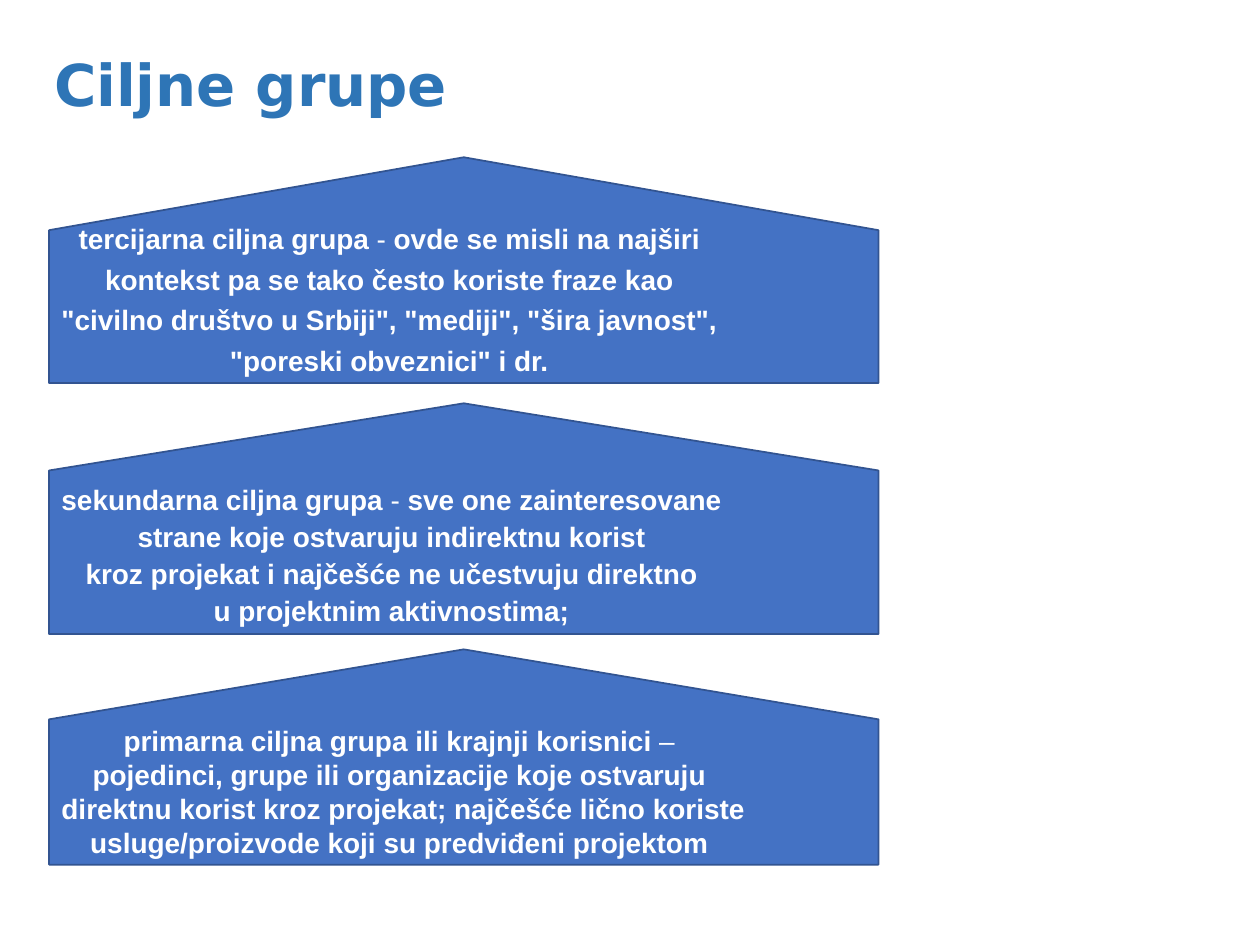
import pptx
import pptx.util
import pptx.dml.color
import pptx.enum.shapes
import pptx.enum.text

Cm, Pt = pptx.util.Cm, pptx.util.Pt
ANCHOR = pptx.enum.text.MSO_ANCHOR

LEFT, WIDTH = 0.99, 16.72
TOP, STEP = 3.17, 4.96

# height (cm), point depth, line spacing, bottom inset (cm), lines of (text, bold) runs
GROUPS = [
    (4.55, 0.323, 1.0, 0.25, [
        [("tercijarna ciljna grupa", True), (" - ", False),
         ("ovde se misli na najširi ", True)],
        [("kontekst pa se tako često koriste fraze kao ", True)],
        [('"civilno društvo u Srbiji", "mediji", "šira javnost", ', True)],
        [('"poreski obveznici" i dr. ', True)],
    ]),
    (4.65, 0.291, 0.9, 0.13, [
        [("sekundarna ciljna grupa ", True), ("- ", False),
         ("sve one zainteresovane ", True)],
        [("strane koje ostvaruju indirektnu korist ", True)],
        [("kroz projekat i najčešće ne učestvuju direktno ", True)],
        [("u projektnim aktivnostima; ", True)],
    ]),
    (4.34, 0.325, 0.8, 0.13, [
        [("primarna ciljna grupa ili krajnji korisnici ", True), ("– ", False)],
        [("pojedinci, grupe ili organizacije koje ostvaruju ", True)],
        [("direktnu korist kroz projekat; najčešće lično koriste", True)],
        [("usluge/proizvode koji su predviđeni projektom ", True)],
    ]),
]


def color(code):
    return pptx.dml.color.RGBColor.from_string(code)


def add_run(para, text, size, font, code, bold):
    run = para.add_run()
    run.text = text
    run.font.size = Pt(size)
    run.font.name = font
    run.font.bold = bold
    run.font.color.rgb = color(code)


def add_title(slide, text):
    box = slide.shapes.add_textbox(Cm(0.84), Cm(0.64), Cm(22.86), Cm(2.24))
    frame = box.text_frame
    frame.word_wrap = True
    frame.vertical_anchor = ANCHOR.MIDDLE
    para = frame.paragraphs[0]
    para.line_spacing = 0.9
    add_run(para, text, 33, "DejaVu Sans", "2E75B6", True)


def add_group(slide, top, height, depth, spacing, inset, lines):
    """Add a pentagon turned to point up, with its text kept level."""
    shift = (WIDTH - height) / 2
    shape = slide.shapes.add_shape(
        pptx.enum.shapes.MSO_SHAPE.PENTAGON,
        Cm(LEFT + shift), Cm(top - shift), Cm(height), Cm(WIDTH))
    shape.rotation = 270
    shape.adjustments[0] = depth
    shape.shadow.inherit = False
    shape.fill.solid()
    shape.fill.fore_color.rgb = color("4472C4")
    shape.line.color.rgb = color("325491")
    shape.line.width = Pt(1)

    frame = shape.text_frame
    frame.word_wrap = False
    frame.vertical_anchor = ANCHOR.BOTTOM
    frame.margin_bottom = Cm(inset)
    shape.element.txBody.bodyPr.set("vert", "eaVert")
    for i, line in enumerate(lines):
        para = frame.add_paragraph() if i else frame.paragraphs[0]
        para.alignment = pptx.enum.text.PP_ALIGN.CENTER
        para.line_spacing = spacing
        para.space_before = Pt(3.9)
        for text, bold in line:
            add_run(para, text, 16, "Arial", "FFFFFF", bold)


def main():
    deck = pptx.Presentation()
    deck.slide_width, deck.slide_height = Cm(25.4), Cm(19.05)
    slide = deck.slides.add_slide(deck.slide_layouts[6])
    add_title(slide, "Ciljne grupe")
    for i, group in reversed(list(enumerate(GROUPS))):
        add_group(slide, TOP + i * STEP, *group)
    deck.save("out.pptx")


if __name__ == "__main__":
    main()
